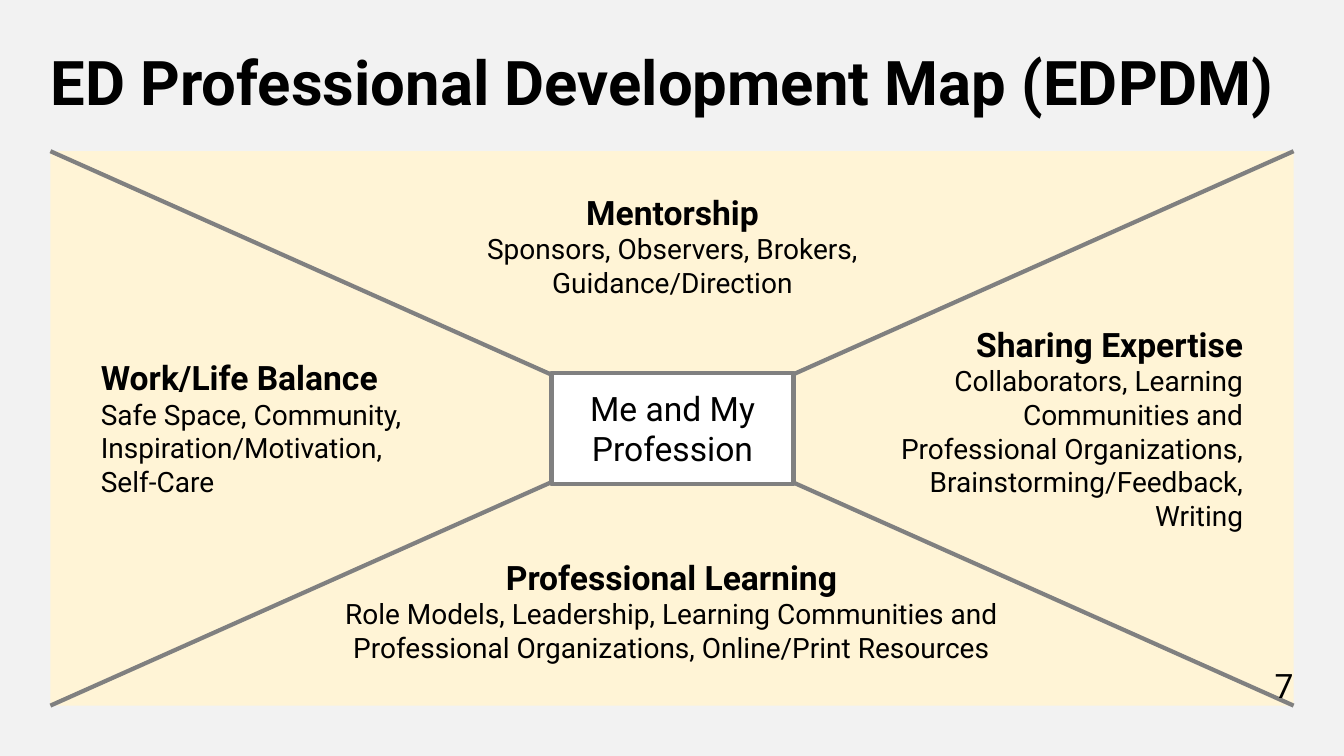
from dataclasses import dataclass

from pptx import Presentation
from pptx import util as u
from pptx.dml.color import RGBColor
from pptx.enum import shapes, text
from pptx.oxml.ns import qn

PX = 9144  # EMU per px, 100 px to the inch
FONT = "Roboto"
BLACK = RGBColor(0x00, 0x00, 0x00)
WHITE = RGBColor(0xFF, 0xFF, 0xFF)
GREY = RGBColor(0x80, 0x80, 0x80)
CREAM = RGBColor(0xFF, 0xF4, 0xD6)
BACKDROP = RGBColor(0xF2, 0xF2, 0xF2)

LEFT, CENTER, RIGHT = text.PP_ALIGN.LEFT, text.PP_ALIGN.CENTER, text.PP_ALIGN.RIGHT
MIDDLE = text.MSO_ANCHOR.MIDDLE

# The map area, divided into four triangles meeting at its centre
MAP_LEFT, MAP_TOP, MAP_WIDTH, MAP_HEIGHT = 50, 150, 1233, 550
MAP_RIGHT, MAP_BOTTOM = MAP_LEFT + MAP_WIDTH, MAP_TOP + MAP_HEIGHT


@dataclass
class Area:
    heading: str
    details: str
    place: tuple[int, int, int, int]
    align: text.PP_ALIGN
    rotation: int


AREAS = [
    Area("Mentorship", "Sponsors, Observers, Brokers, Guidance/Direction",
         (422, 190, 490, 108), CENTER, 180),
    Area("Sharing Expertise",
         "Collaborators, Learning Communities and Professional Organizations, "
         "Brainstorming/Feedback, Writing",
         (875, 321, 358, 209), RIGHT, 270),
    Area("Professional Learning",
         "Role Models, Leadership, Learning Communities and Professional "
         "Organizations, Online/Print Resources",
         (310, 552, 712, 108), CENTER, 0),
    Area("Work/Life Balance", "Safe Space, Community, Inspiration/Motivation, Self-Care",
         (100, 354, 322, 141), LEFT, 90),
]


def emu(*lengths: int) -> list[int]:
    return [length * PX for length in lengths]


def add_span(para, words: str, size: int, bold: bool = False) -> None:
    span = para.add_run()
    span.text = words
    span.font.name = FONT
    span.font.size = u.Pt(size)
    span.font.bold = bold
    span.font.color.rgb = BLACK


def clear_margins(frame) -> None:
    frame.margin_left = frame.margin_top = frame.margin_right = frame.margin_bottom = 0
    frame.word_wrap = True


def add_text_box(page, place: tuple[int, int, int, int]):
    frame = page.shapes.add_textbox(*emu(*place)).text_frame
    clear_margins(frame)
    return frame


def add_triangle(page, rotation: int) -> None:
    """Add one quarter of the map; sideways quarters swap width and height."""
    if rotation % 180:
        width, height = MAP_HEIGHT, MAP_WIDTH // 2
        left = MAP_LEFT if rotation == 90 else MAP_RIGHT - height
        left += (height - width) // 2
        top = MAP_TOP + (width - height) // 2
    else:
        width, height = MAP_WIDTH, MAP_HEIGHT // 2
        left = MAP_LEFT
        top = MAP_TOP if rotation == 180 else MAP_BOTTOM - height
    triangle = page.shapes.add_shape(
        shapes.MSO_SHAPE.ISOSCELES_TRIANGLE, *emu(left, top, width, height))
    triangle.rotation = rotation
    triangle.shadow.inherit = False
    triangle.fill.solid()
    triangle.fill.fore_color.rgb = CREAM
    triangle.line.fill.background()


def add_area(page, area: Area) -> None:
    add_triangle(page, area.rotation)
    frame = add_text_box(page, area.place)
    frame.auto_size = text.MSO_AUTO_SIZE.SHAPE_TO_FIT_TEXT
    heading, details = frame.paragraphs[0], frame.add_paragraph()
    heading.alignment = details.alignment = area.align
    add_span(heading, area.heading, 24, bold=True)
    add_span(details, area.details, 20)


def style_line(line) -> None:
    line.color.rgb = GREY
    line.width = u.Pt(3)


def add_diagonal(page, start_x: int, end_x: int) -> None:
    diagonal = page.shapes.add_connector(
        shapes.MSO_CONNECTOR.STRAIGHT, *emu(start_x, MAP_TOP, end_x, MAP_BOTTOM))
    style_line(diagonal.line)
    properties = diagonal._element.spPr
    properties.append(properties.makeelement(qn("a:effectLst"), {}))


def add_center(page) -> None:
    box = page.shapes.add_shape(shapes.MSO_SHAPE.RECTANGLE, *emu(547, 370, 240, 110))
    box.shadow.inherit = False
    box.fill.solid()
    box.fill.fore_color.rgb = WHITE
    style_line(box.line)
    box.text_frame.word_wrap = True
    box.text_frame.vertical_anchor = MIDDLE
    para = box.text_frame.paragraphs[0]
    para.alignment = CENTER
    add_span(para, "Me and My Profession", 24)


def add_title(page) -> None:
    title = page.shapes.title
    title.left, title.top, title.width, title.height = emu(MAP_LEFT, 50, MAP_WIDTH, 70)
    frame = title.text_frame
    clear_margins(frame)
    frame.auto_size = text.MSO_AUTO_SIZE.NONE
    frame.vertical_anchor = MIDDLE
    para = frame.paragraphs[0]
    para.alignment = LEFT
    para.line_spacing = 0.9
    add_span(para, "ED Professional Development Map (EDPDM)", 44, bold=True)


def add_page_number(page) -> None:
    frame = add_text_box(page, (MAP_RIGHT - 100, 660, 100, 40))
    frame.vertical_anchor = MIDDLE
    para = frame.paragraphs[0]
    para.alignment = RIGHT
    add_span(para, "7", 24)


def main() -> None:
    deck = Presentation()
    deck.slide_width, deck.slide_height = emu(1333, 750)
    page = deck.slides.add_slide(deck.slide_layouts.get_by_name("Title Only"))
    page.background.fill.solid()
    page.background.fill.fore_color.rgb = BACKDROP

    add_title(page)

    # Map: quarters, then diagonals, then the centre box over their crossing
    for area in AREAS:
        add_area(page, area)
    add_diagonal(page, MAP_LEFT, MAP_RIGHT)
    add_diagonal(page, MAP_RIGHT, MAP_LEFT)
    add_center(page)

    add_page_number(page)
    deck.save("out.pptx")


if __name__ == "__main__":
    main()
